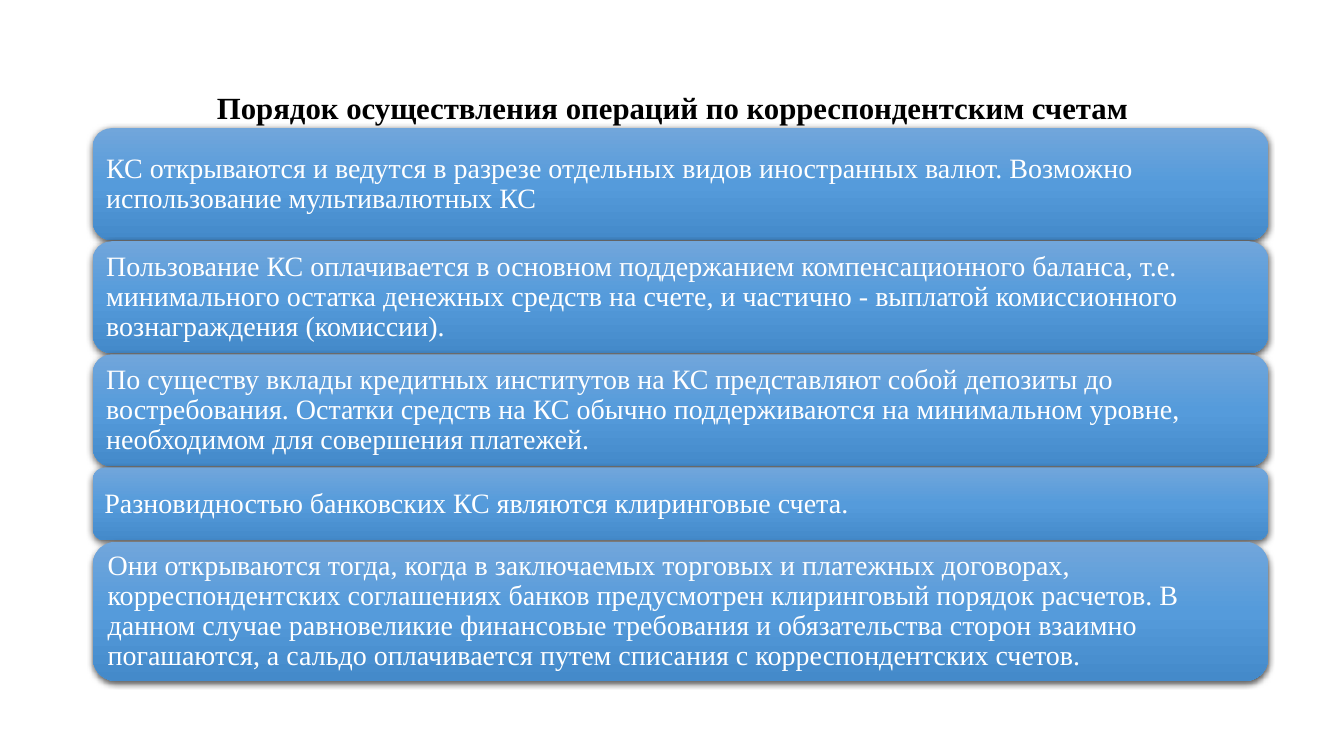
import lxml.etree
import pptx
import pptx.dml.color
import pptx.enum.shapes
import pptx.enum.text
import pptx.oxml.ns
import pptx.util

Cm = pptx.util.Cm
Pt = pptx.util.Pt
qn = pptx.oxml.ns.qn
ALIGN = pptx.enum.text.PP_ALIGN
ANCHOR = pptx.enum.text.MSO_ANCHOR

LEFT = 2.34
GAP = 0.03
GRADIENT = [(0, "71A6DB"), (50, "559BDB"), (100, "448ACA")]
RULES = [
    (2.82, "КС открываются и ведутся в разрезе отдельных видов иностранных валют. "
           "Возможно использование мультивалютных КС"),
    (2.82, "Пользование КС оплачивается в основном поддержанием компенсационного баланса, "
           "т.е. минимального остатка денежных средств на счете, и частично - выплатой "
           "комиссионного вознаграждения (комиссии)."),
    (2.82, "По существу вклады кредитных институтов на КС представляют собой депозиты до "
           "востребования. Остатки средств на КС обычно поддерживаются на минимальном "
           "уровне, необходимом для совершения платежей."),
    (1.84, "Разновидностью банковских КС являются клиринговые счета."),
    (3.51, "Они открываются тогда, когда в заключаемых торговых и платежных договорах, "
           "корреспондентских соглашениях банков предусмотрен клиринговый порядок расчетов. "
           "В данном случае равновеликие финансовые требования и обязательства сторон "
           "взаимно погашаются, а сальдо оплачивается путем списания с корреспондентских "
           "счетов."),
]


def write_text(shape, text, size, color, bold=False, align=ALIGN.LEFT,
               anchor=ANCHOR.MIDDLE, inset=0.2):
    frame = shape.text_frame
    frame.word_wrap = True
    frame.auto_size = pptx.enum.text.MSO_AUTO_SIZE.NONE
    frame.vertical_anchor = anchor
    frame.margin_left = frame.margin_right = Cm(inset)
    frame.margin_top = frame.margin_bottom = Cm(0.13)
    para = frame.paragraphs[0]
    para.alignment = align
    para.line_spacing = 0.9
    span = para.add_run()
    span.text = text
    span.font.name = "Times New Roman"
    span.font.size = Pt(size)
    span.font.bold = bold
    span.font.color.rgb = pptx.dml.color.RGBColor.from_string(color)


def add_glossy_look(box):
    """Give the box a three-stop vertical gradient and a soft shadow below."""
    box.line.fill.background()
    box.fill.gradient()
    box.fill.gradient_angle = 270
    properties = box._element.spPr
    stops = properties.find(qn("a:gradFill")).find(qn("a:gsLst"))
    for stop in list(stops):
        stops.remove(stop)
    for percent, color in GRADIENT:
        stop = lxml.etree.SubElement(stops, qn("a:gs"), pos=str(percent * 1000))
        lxml.etree.SubElement(stop, qn("a:srgbClr"), val=color)

    box.shadow.inherit = False
    shadow = lxml.etree.SubElement(
        properties.find(qn("a:effectLst")), qn("a:outerShdw"),
        blurRad=str(Pt(4.5)), dist=str(Pt(1.5)), dir="5400000",
        algn="ctr", rotWithShape="0")
    shade = lxml.etree.SubElement(shadow, qn("a:srgbClr"), val="000000")
    lxml.etree.SubElement(shade, qn("a:alpha"), val="63000")


deck = pptx.Presentation()
deck.slide_width = Cm(33.87)
deck.slide_height = Cm(19.05)
page = deck.slides.add_slide(deck.slide_layouts[5])

title = page.shapes.title
title.left, title.top, title.width, title.height = Cm(LEFT), Cm(2.21), Cm(29.21), Cm(1.02)
write_text(title, "Порядок осуществления операций по корреспондентским счетам",
           size=22, color="000000", bold=True, align=ALIGN.CENTER,
           anchor=ANCHOR.TOP, inset=0.25)

top = 3.23
for height, text in RULES:
    box = page.shapes.add_shape(pptx.enum.shapes.MSO_SHAPE.ROUNDED_RECTANGLE,
                                Cm(LEFT), Cm(top), Cm(29.62), Cm(height))
    add_glossy_look(box)
    write_text(box, text, size=20, color="FFFFFF")
    top += height + GAP

deck.save("out.pptx")
